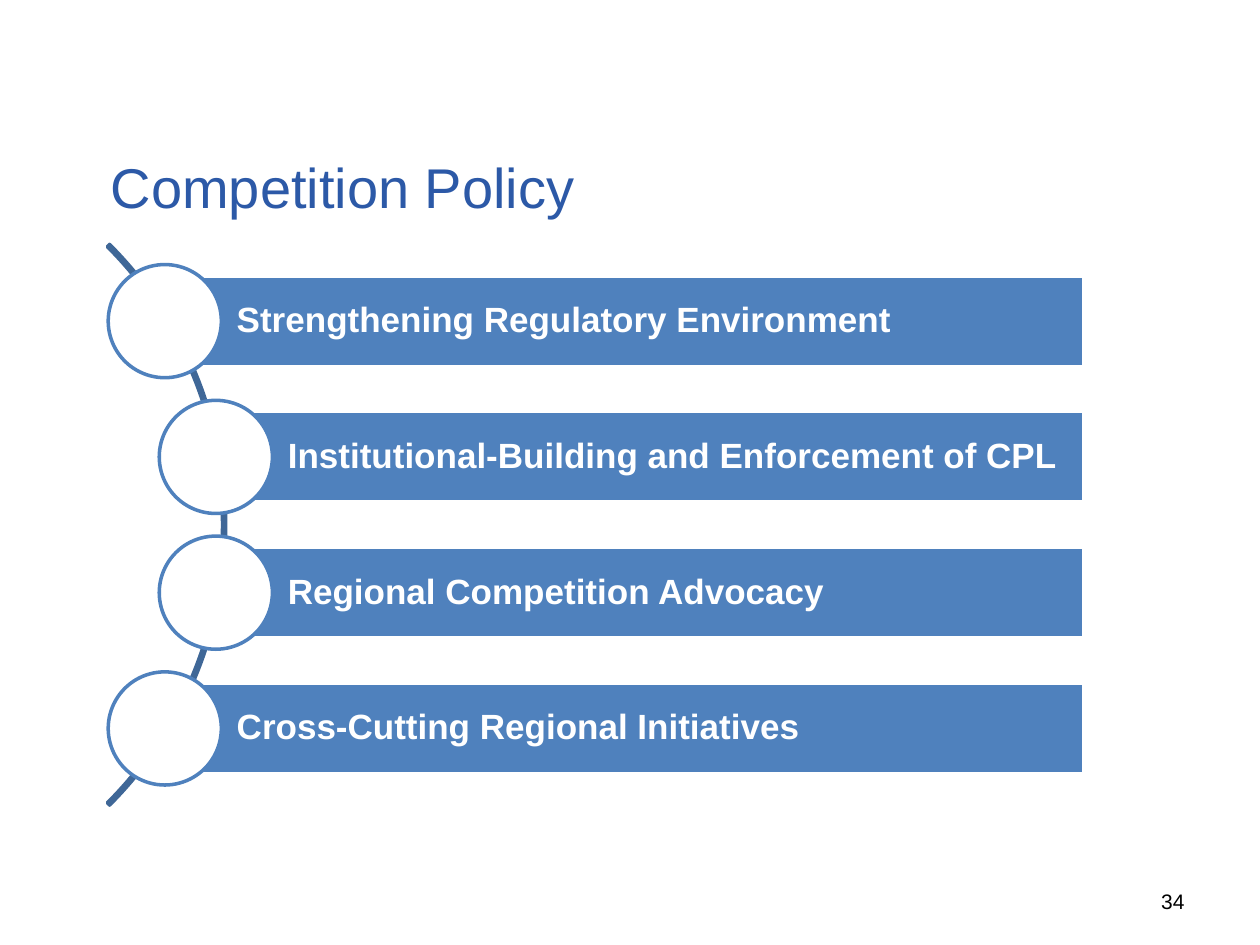
from dataclasses import dataclass
from math import sqrt

from pptx import Presentation
from pptx.dml.color import RGBColor
from pptx.enum.shapes import MSO_SHAPE
from pptx.enum.text import MSO_ANCHOR, PP_ALIGN
from pptx.util import Inches, Pt

ARC, BAR, CIRCLE = MSO_SHAPE.BLOCK_ARC, MSO_SHAPE.RECTANGLE, MSO_SHAPE.OVAL
MIDDLE = MSO_ANCHOR.MIDDLE
LEFT, RIGHT = PP_ALIGN.LEFT, PP_ALIGN.RIGHT


@dataclass(frozen=True)
class Theme:
    font: str = "Arial"
    title: RGBColor = RGBColor(0x2C, 0x59, 0xA7)
    accent: RGBColor = RGBColor(0x4F, 0x81, 0xBD)
    arc: RGBColor = RGBColor(0x3F, 0x67, 0x97)
    light: RGBColor = RGBColor(0xFF, 0xFF, 0xFF)
    dark: RGBColor = RGBColor(0, 0, 0)
    title_size: int = 32
    bar_size: int = 20
    number_size: int = 12
    line_width: int = 2


@dataclass(frozen=True)
class Box:
    left: float
    top: float
    width: float
    height: float

    def emu(self):
        return [Inches(side) for side in (self.left, self.top, self.width, self.height)]


THEME = Theme()
PAGE = Box(0, 0, 10, 7.5)
TITLE_BOX = Box(0.78, 1.09, 7.81, 0.77)
AREAS_BOX = Box(0.8, 2.01, 7.8, 4.31)
NUMBER_BOX = Box(7.17, 6.95, 2.33, 0.4)
POLICY_AREAS = (
    "Strengthening Regulatory Environment",
    "Institutional-Building and Enforcement of CPL",
    "Regional Competition Advocacy",
    "Cross-Cutting Regional Initiatives",
)


def square_around(x, y, side):
    return Box(x - side / 2, y - side / 2, side, side)


def write(frame, words, size, color, bold=False, align=LEFT):
    frame.word_wrap = True
    frame.vertical_anchor = MIDDLE
    paragraph = frame.paragraphs[0]
    paragraph.text = words
    paragraph.alignment = align
    paragraph.font.name = THEME.font
    paragraph.font.size = Pt(size)
    paragraph.font.bold = bold
    paragraph.font.color.rgb = color
    return paragraph


def draw(slide, preset, box, line, fill=None):
    shape = slide.shapes.add_shape(preset, *box.emu())
    shape.shadow.inherit = False
    if fill is None:
        shape.fill.background()
    else:
        shape.fill.solid()
        shape.fill.fore_color.rgb = fill
    shape.line.color.rgb = line
    shape.line.width = Pt(THEME.line_width)
    return shape


def add_label(slide, box, words, size, color, align=LEFT):
    label = slide.shapes.add_textbox(*box.emu())
    write(label.text_frame, words, size, color, align=align)


def add_bar(slide, box, words, row):
    bar = draw(slide, BAR, box, THEME.light, THEME.accent)
    frame = bar.text_frame
    frame.margin_left = Inches(row * 0.53)
    frame.margin_right = frame.margin_top = frame.margin_bottom = Inches(row * 0.06)
    write(frame, words, THEME.bar_size, THEME.light, bold=True).line_spacing = 0.9


def add_policy_areas(slide, box, areas):
    row = box.height / len(areas)
    center_x = box.left - box.height / 2
    center_y = box.top + box.height / 2
    diameter = box.height * 1.46
    orbit = diameter / 2 * 0.99

    arc = draw(slide, ARC, square_around(center_x, center_y, diameter), THEME.arc)
    for index, value in enumerate((189, 27, 0.004)):
        arc.adjustments[index] = value

    for index, area in enumerate(areas):
        y = box.top + (index + 0.5) * row
        x = center_x + sqrt(orbit**2 - (y - center_y) ** 2)
        bar_box = Box(x, y - row / 3, box.left + box.width - x, row * 2 / 3)
        add_bar(slide, bar_box, area, row)
        draw(slide, CIRCLE, square_around(x, y, row * 5 / 6), THEME.accent, THEME.light)


def main():
    deck = Presentation()
    deck.slide_width, deck.slide_height = Inches(PAGE.width), Inches(PAGE.height)
    slide = deck.slides.add_slide(deck.slide_layouts[6])
    add_label(slide, TITLE_BOX, "Competition Policy", THEME.title_size, THEME.title)
    add_policy_areas(slide, AREAS_BOX, POLICY_AREAS)
    add_label(slide, NUMBER_BOX, "34", THEME.number_size, THEME.dark, RIGHT)
    deck.save("out.pptx")


if __name__ == "__main__":
    main()
